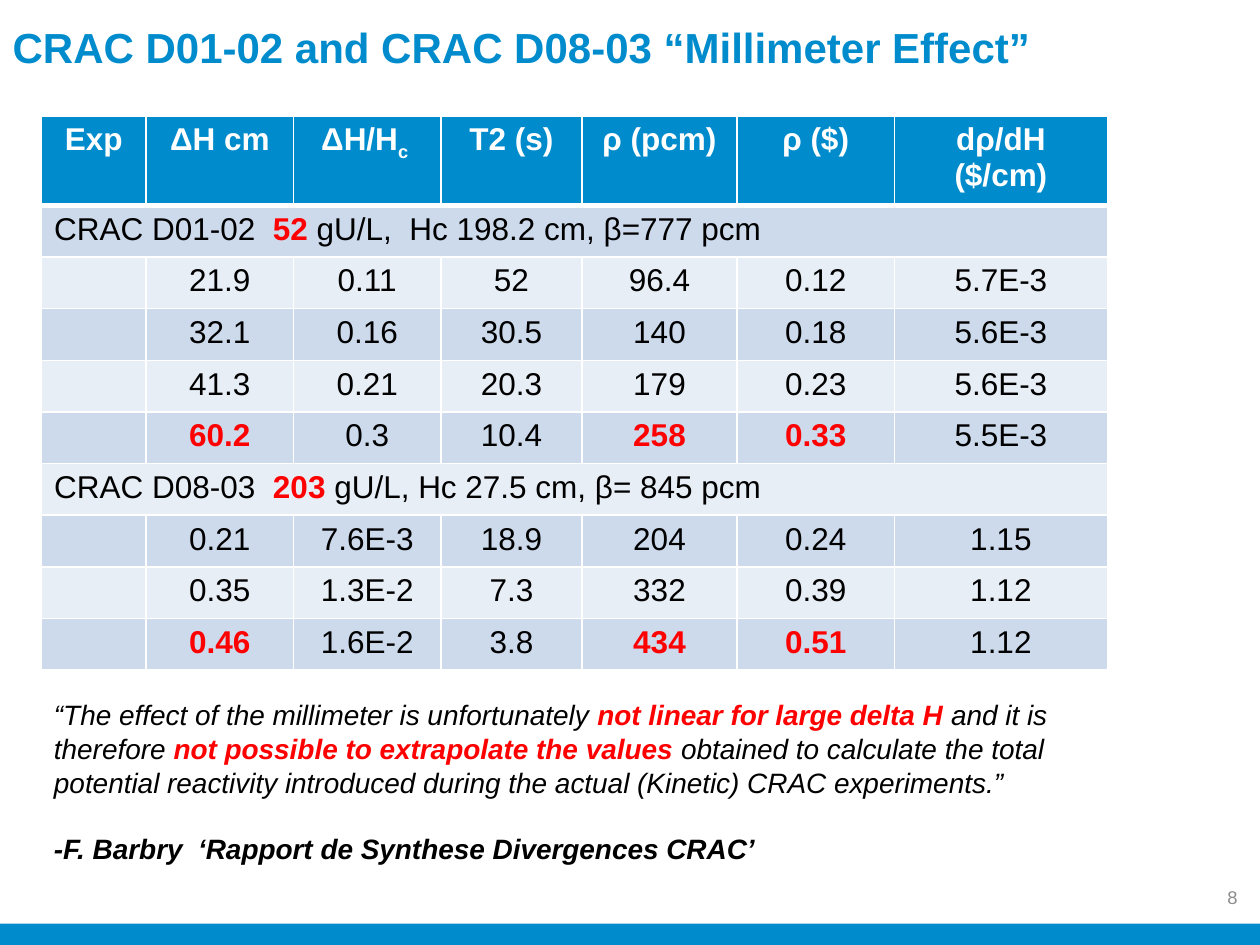
from lxml import etree
from pptx import Presentation
from pptx.dml.color import RGBColor
from pptx.enum import shapes, text
from pptx.oxml.ns import qn
from pptx.util import Inches, Pt

BLUE, WHITE, BLACK, RED, GRAY = "008CCC", "FFFFFF", "000000", "FF0000", "8C8C8C"
BANDS = ("E7EEF6", "CCDAEC")
LEFT, CENTER, RIGHT = text.PP_ALIGN.LEFT, text.PP_ALIGN.CENTER, text.PP_ALIGN.RIGHT

TITLE = "CRAC D01-02 and CRAC D08-03 “Millimeter Effect”"
HEADERS = ["Exp", "ΔH cm", "ΔH/H", "T2 (s)", "ρ (pcm)", "ρ ($)", "dρ/dH ($/cm)"]
SUBSCRIPTS = {"ΔH/H": "c "}
COL_WIDTHS = [0.83, 1.17, 1.17, 1.12, 1.23, 1.25, 1.69]
HEADER_HEIGHT, ROW_HEIGHT = 0.71, 0.41
KEY_COLUMNS = (1, 4, 5)
EXPERIMENTS = [
    ([("CRAC D01-02  ", False), ("52", True), (" gU/L,  Hc 198.2 cm, β=777 pcm", False)],
     [["", "21.9", "0.11", "52", "96.4", "0.12", "5.7E-3"],
      ["", "32.1", "0.16", "30.5", "140", "0.18", "5.6E-3"],
      ["", "41.3", "0.21", "20.3", "179", "0.23", "5.6E-3"],
      ["", "60.2", "0.3", "10.4", "258", "0.33", "5.5E-3"]]),
    ([("CRAC D08-03  ", False), ("203 ", True), ("gU/L, Hc 27.5 cm, β= 845 pcm", False)],
     [["", "0.21", "7.6E-3", "18.9", "204", "0.24", "1.15"],
      ["", "0.35", "1.3E-2", "7.3", "332", "0.39", "1.12"],
      ["", "0.46", "1.6E-2", "3.8", "434", "0.51", "1.12"]]),
]
QUOTE = [
    ("“The effect of the millimeter is unfortunately ", False),
    ("not linear for large delta H ", True),
    ("and it is therefore ", False),
    ("not possible to extrapolate the values ", True),
    ("obtained to calculate the total potential reactivity introduced during "
     "the actual (Kinetic) CRAC experiments.”", False),
]
SOURCE = "-F. Barbry  ‘Rapport de Synthese Divergences CRAC’"
PAGE = "8"


def rgb(value):
    return RGBColor.from_string(value)


def add_run(p, words, size, color=BLACK, bold=False, italic=False):
    r = p.add_run()
    r.text = words
    r.font.name, r.font.size = "Arial", Pt(size)
    r.font.bold, r.font.italic = bold, italic
    r.font.color.rgb = rgb(color)
    return r


def add_marked(p, parts, size, italic=False):
    for words, key in parts:
        add_run(p, words, size, RED if key else BLACK, key, italic)


def place(sp, left, top, width, height):
    sp.left, sp.top = Inches(left), Inches(top)
    sp.width, sp.height = Inches(width), Inches(height)


def style_cell(cell, fill, top=1, bottom=1):
    tcPr = cell._tc.get_or_add_tcPr()
    for side, width in (("L", 1), ("R", 1), ("T", top), ("B", bottom)):
        ln = etree.SubElement(tcPr, qn("a:ln" + side), w=str(Pt(width)))
        solid = etree.SubElement(ln, qn("a:solidFill"))
        etree.SubElement(solid, qn("a:srgbClr"), val=WHITE)
    cell.fill.solid()
    cell.fill.fore_color.rgb = rgb(fill)


def add_results(s):
    rows = []
    for heading, values in EXPERIMENTS:
        rows.append((heading, None))
        rows += [(None, row) for row in values]
    last_rows = [values[-1] for _, values in EXPERIMENTS]
    height = HEADER_HEIGHT + ROW_HEIGHT * len(rows)
    table = s.shapes.add_table(
        len(rows) + 1, len(HEADERS), Inches(0.33), Inches(0.92),
        Inches(sum(COL_WIDTHS)), Inches(height)).table
    for col, width in zip(table.columns, COL_WIDTHS):
        col.width = Inches(width)
    for i, row in enumerate(table.rows):
        row.height = Inches(ROW_HEIGHT if i else HEADER_HEIGHT)

    for c, label in enumerate(HEADERS):
        cell = table.cell(0, c)
        style_cell(cell, BLUE, bottom=3)
        p = cell.text_frame.paragraphs[0]
        p.alignment = CENTER
        add_run(p, label, 18, WHITE, True)
        if label in SUBSCRIPTS:
            r = add_run(p, SUBSCRIPTS[label], 18, WHITE, True)
            r.font._element.set("baseline", "-25000")

    for i, (heading, values) in enumerate(rows, 1):
        for c in range(len(HEADERS)):
            cell = table.cell(i, c)
            style_cell(cell, BANDS[i % 2], top=3 if i == 1 else 1)
            p = cell.text_frame.paragraphs[0]
            if values:
                p.alignment = CENTER
                key = values in last_rows and c in KEY_COLUMNS
                if values[c]:
                    add_marked(p, [(values[c], key)], 18)
                else:
                    p.font.size = Pt(18)
        if heading:
            table.cell(i, 0).merge(table.cell(i, len(HEADERS) - 1))
            add_marked(table.cell(i, 0).text_frame.paragraphs[0], heading, 18)


def add_box(s, left, top, width, height, anchor):
    sp = s.shapes.add_textbox(Inches(left), Inches(top), Inches(width), Inches(height))
    tf = sp.text_frame
    tf.word_wrap = True
    tf.vertical_anchor = anchor
    return tf


def main():
    prs = Presentation()
    prs.slide_width, prs.slide_height = Inches(10), Inches(7.5)
    s = prs.slides.add_slide(prs.slide_layouts[5])

    bar = s.shapes.add_shape(shapes.MSO_SHAPE.RECTANGLE, Inches(0), Inches(7.33),
                             Inches(10), Inches(0.17))
    bar.shadow.inherit = False
    bar.fill.solid()
    bar.fill.fore_color.rgb = rgb(BLUE)
    bar.line.fill.background()

    title = s.shapes.title
    place(title, 0, -0.08, 9.33, 0.65)
    tf = title.text_frame
    tf.auto_size = text.MSO_AUTO_SIZE.NONE
    tf.vertical_anchor = text.MSO_ANCHOR.BOTTOM
    tf.margin_bottom = Inches(0)
    tf.paragraphs[0].alignment = LEFT
    add_run(tf.paragraphs[0], TITLE, 24, BLUE, True)

    add_results(s)

    p = add_box(s, 9.42, 6.92, 0.5, 0.4, text.MSO_ANCHOR.MIDDLE).paragraphs[0]
    p.alignment = RIGHT
    add_run(p, PAGE, 10.5, GRAY)

    tf = add_box(s, 0.33, 5.49, 8.92, 1.45, text.MSO_ANCHOR.TOP)
    add_marked(tf.paragraphs[0], QUOTE, 16, italic=True)
    p = tf.add_paragraph()
    p.space_before = Pt(19)
    add_run(p, SOURCE, 16, bold=True, italic=True)

    prs.save("out.pptx")


if __name__ == "__main__":
    main()
